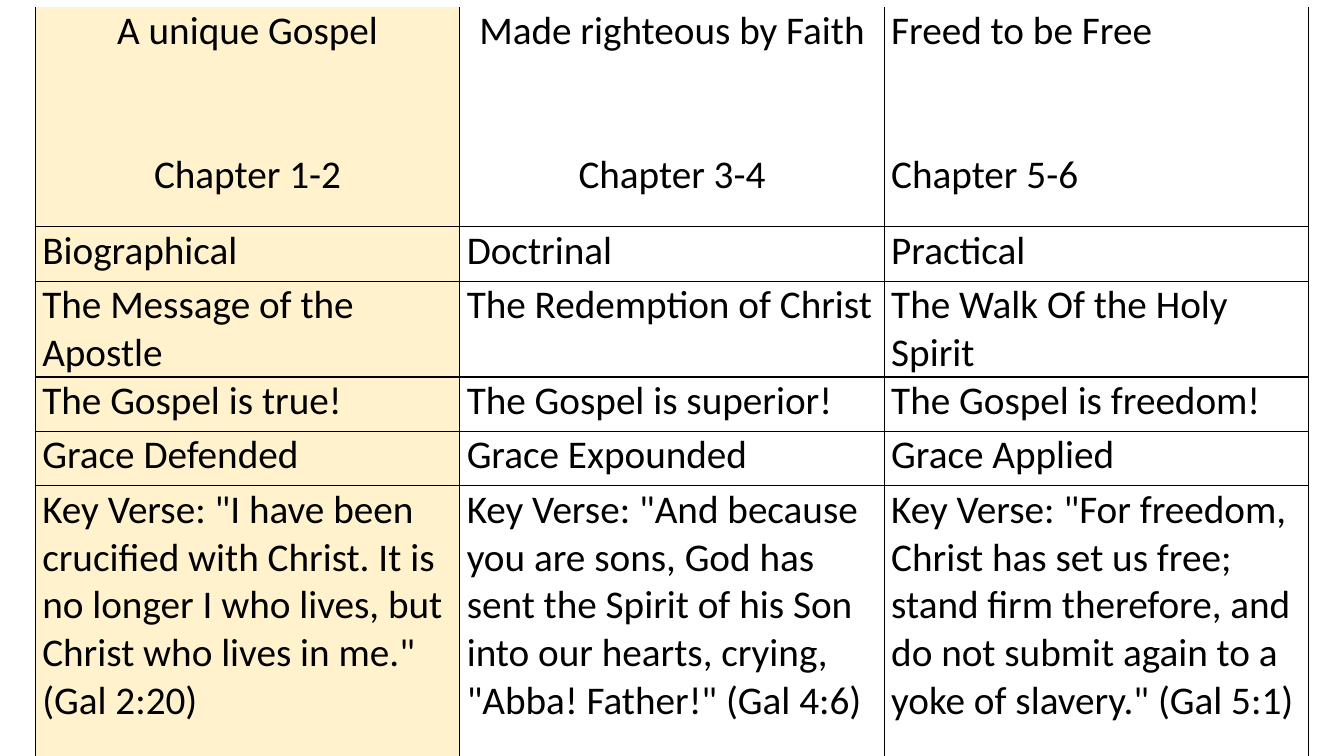
import pptx
import pptx.util
import pptx.dml.color
import pptx.enum.text
import lxml.etree
from pptx.util import Inches

BLACK = pptx.dml.color.RGBColor(0x00, 0x00, 0x00)
CREAM = pptx.dml.color.RGBColor(0xFF, 0xF2, 0xCC)
NAMESPACE = "http://schemas.openxmlformats.org/drawingml/2006/main"
CENTER = pptx.enum.text.PP_ALIGN.CENTER
LEFT = pptx.enum.text.PP_ALIGN.LEFT

CELL_FORMAT = {
    "margin_left": Inches(0.07),
    "margin_right": Inches(0.07),
    "margin_top": 0,
    "margin_bottom": 0,
}
FONT_FORMAT = {"name": "Calibri", "size": pptx.util.Pt(28), "bold": False}
COLUMN_WIDTH = 4.21
ROW_HEIGHTS = [2.18, 0.54, 0.54, 0.54, 0.54, 2.7]
CHAPTER_GAP = pptx.util.Pt(68.4)

OUTLINE = [
    [
        ["A unique Gospel", "Chapter 1-2"],
        ["Made righteous by Faith", "Chapter 3-4"],
        ["Freed to be Free", "Chapter 5-6"],
    ],
    [["Biographical"], ["Doctrinal"], ["Practical"]],
    [
        ["The Message of the Apostle"],
        ["The Redemption of Christ"],
        ["The Walk Of the Holy Spirit"],
    ],
    [["The Gospel is true!"], ["The Gospel is superior!"], ["The Gospel is freedom!"]],
    [["Grace Defended"], ["Grace Expounded"], ["Grace Applied"]],
    [
        ['Key Verse: "I have been crucified with Christ. It is no longer I who lives, '
         'but Christ who lives in me." (Gal 2:20)'],
        ['Key Verse: "And because you are sons, God has sent the Spirit of his Son '
         'into our hearts, crying, "Abba! Father!" (Gal 4:6)'],
        ['Key Verse: "For freedom, Christ has set us free; stand firm therefore, and '
         'do not submit again to a yoke of slavery." (Gal 5:1)'],
    ],
]


def add_border(cell, side, visible):
    properties = cell._tc.get_or_add_tcPr()
    line = lxml.etree.SubElement(properties, f"{{{NAMESPACE}}}ln{side}", w="12700")
    if visible:
        fill = lxml.etree.SubElement(line, f"{{{NAMESPACE}}}solidFill")
        lxml.etree.SubElement(fill, f"{{{NAMESPACE}}}srgbClr", val=str(BLACK))
    else:
        lxml.etree.SubElement(line, f"{{{NAMESPACE}}}noFill")


deck = pptx.Presentation()
deck.slide_width = Inches(13.33)
deck.slide_height = Inches(7.5)
page = deck.slides.add_slide(deck.slide_layouts[6])

frame = page.shapes.add_table(
    len(OUTLINE), 3, Inches(0.35), Inches(0.07),
    Inches(3 * COLUMN_WIDTH), Inches(sum(ROW_HEIGHTS)),
)
table = frame.table
table.first_row = False
table.horz_banding = False
for column in table.columns:
    column.width = Inches(COLUMN_WIDTH)
for row, height in zip(table.rows, ROW_HEIGHTS):
    row.height = Inches(height)

for row_index, entries in enumerate(OUTLINE):
    for column_index, lines in enumerate(entries):
        cell = table.cell(row_index, column_index)
        for name, value in CELL_FORMAT.items():
            setattr(cell, name, value)
        for side in "LRTB":
            add_border(cell, side, side != "T" or row_index > 0)
        if column_index == 0:
            cell.fill.solid()
            cell.fill.fore_color.rgb = CREAM
        else:
            cell.fill.background()
        cell.text = "\n".join(lines)
        for line_index, para in enumerate(cell.text_frame.paragraphs):
            para.alignment = CENTER if row_index == 0 and column_index < 2 else LEFT
            if line_index > 0:
                para.space_before = CHAPTER_GAP
            for span in para.runs:
                for name, value in FONT_FORMAT.items():
                    setattr(span.font, name, value)
                span.font.color.rgb = BLACK

deck.save("out.pptx")
